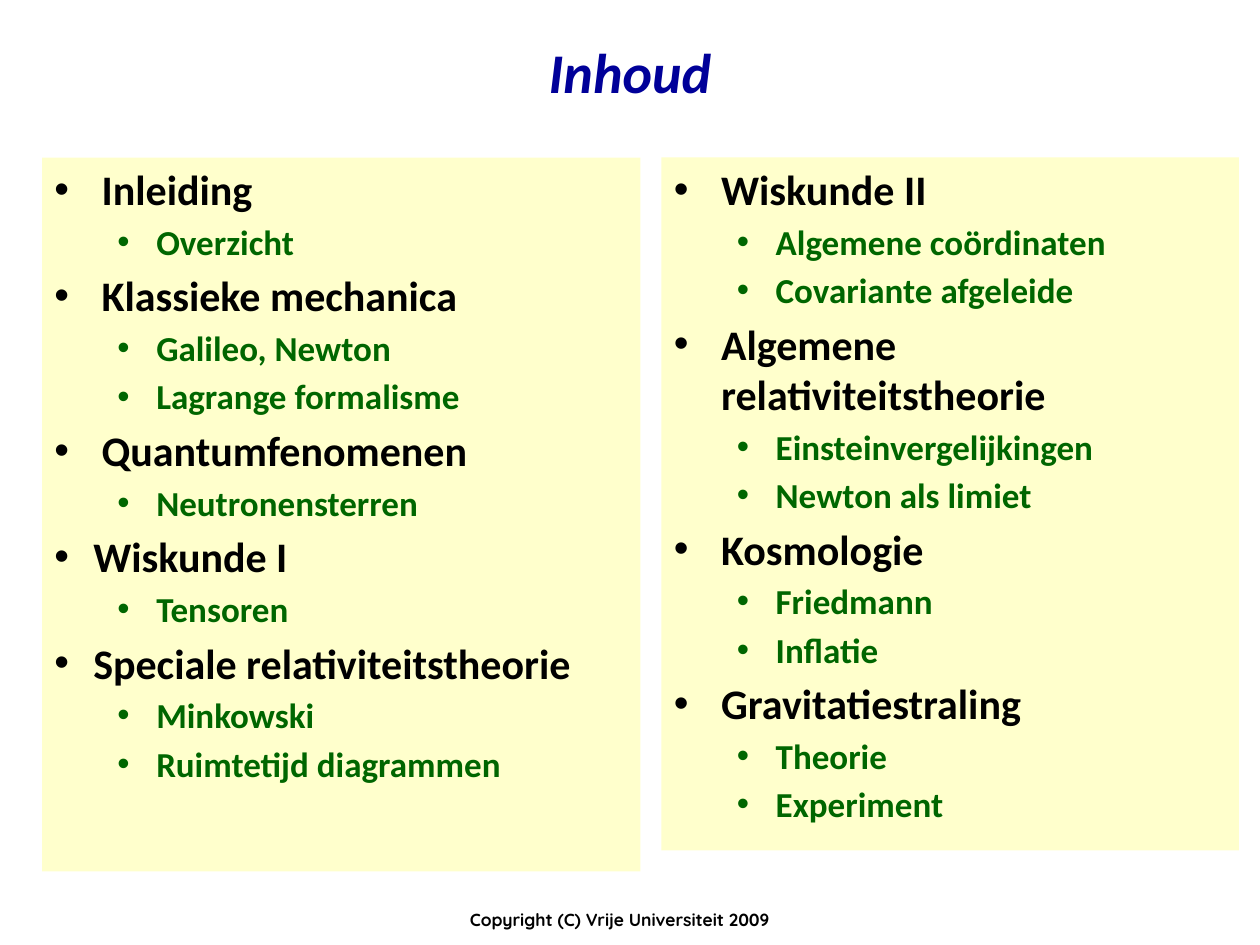
from dataclasses import dataclass

from lxml import etree
from pptx import Presentation
from pptx.dml.color import RGBColor
from pptx.enum.shapes import MSO_SHAPE
from pptx.enum.text import MSO_ANCHOR, MSO_AUTO_SIZE, PP_ALIGN
from pptx.oxml.ns import qn
from pptx.util import Emu, Pt

PX = 7620  # EMU per px, 120 px to the inch
RECT = MSO_SHAPE.RECTANGLE
TOP = MSO_ANCHOR.TOP
LEFT, CENTER = PP_ALIGN.LEFT, PP_ALIGN.CENTER
FIT_SHAPE = MSO_AUTO_SIZE.SHAPE_TO_FIT_TEXT
COLORS = {"title": "000099", "panel": "FFFFCC", "topic": "000000", "detail": "006600"}


@dataclass(frozen=True)
class Box:
    x: int
    y: int
    w: int
    h: int

    def emu(self) -> list[Emu]:
        return [Emu(v * PX) for v in (self.x, self.y, self.w, self.h)]


@dataclass(frozen=True)
class Level:
    margin: int
    hang: int
    space: float
    font: dict


@dataclass(frozen=True)
class Topic:
    text: str
    details: tuple[str, ...]
    narrow: bool = False


@dataclass(frozen=True)
class Panel:
    box: Box
    topics: tuple[Topic, ...]


TITLE_FONT = {"name": "Calibri", "size": Pt(32), "bold": True, "italic": True}
FOOTER_FONT = {"name": "Quicksand", "size": Pt(10), "bold": True}
TOPIC_FONT = {"name": "Calibri", "size": Pt(24), "bold": True}
DETAIL_FONT = {"name": "Calibri", "size": Pt(20), "bold": True}

TOPIC = Level(45, 45, 4.3, TOPIC_FONT)
NARROW_TOPIC = Level(37, 37, 4.3, TOPIC_FONT)
DETAIL = Level(97, 37, 3.6, DETAIL_FONT)

PANELS = (
    Panel(Box(40, 150, 570, 680), (
        Topic("Inleiding", ("Overzicht",)),
        Topic("Klassieke mechanica", ("Galileo, Newton", "Lagrange formalisme")),
        Topic("Quantumfenomenen", ("Neutronensterren",)),
        Topic("Wiskunde I", ("Tensoren",), narrow=True),
        Topic("Speciale relativiteitstheorie",
              ("Minkowski", "Ruimtetijd diagrammen"), narrow=True),
    )),
    Panel(Box(630, 150, 550, 660), (
        Topic("Wiskunde II", ("Algemene coördinaten", "Covariante afgeleide")),
        Topic("Algemene relativiteitstheorie",
              ("Einsteinvergelijkingen", "Newton als limiet")),
        Topic("Kosmologie", ("Friedmann", "Inflatie")),
        Topic("Gravitatiestraling", ("Theorie", "Experiment")),
    )),
)


def format_font(font, values: dict, color: str) -> None:
    for name, value in values.items():
        setattr(font, name, value)
    font.color.rgb = RGBColor.from_string(COLORS[color])


def place(sp, box: Box) -> None:
    sp.left, sp.top, sp.width, sp.height = box.emu()


def write_line(tf, text: str, font: dict, color: str) -> None:
    p = tf.paragraphs[0]
    p.alignment = CENTER
    r = p.add_run()
    r.text = text
    format_font(r.font, font, color)


def add_item(tf, text: str, level: Level, color: str) -> None:
    first = not tf.paragraphs[0].runs
    p = tf.paragraphs[0] if first else tf.add_paragraph()
    p.alignment = LEFT
    p.level = 1 if level is DETAIL else 0
    if not first:
        p.space_before = Pt(level.space)
    pPr = p._p.get_or_add_pPr()
    pPr.set("marL", str(level.margin * PX))
    pPr.set("indent", str(-level.hang * PX))
    etree.SubElement(pPr, qn("a:buFont")).set("typeface", "Arial")
    etree.SubElement(pPr, qn("a:buChar")).set("char", "•")
    r = p.add_run()
    r.text = text
    format_font(r.font, level.font, color)


def add_panel(s, panel: Panel) -> None:
    sp = s.shapes.add_shape(RECT, *panel.box.emu())
    sp.shadow.inherit = False
    sp.fill.solid()
    sp.fill.fore_color.rgb = RGBColor.from_string(COLORS["panel"])
    sp.line.fill.background()
    tf = sp.text_frame
    tf.word_wrap = True
    tf.vertical_anchor = TOP
    for topic in panel.topics:
        add_item(tf, topic.text, NARROW_TOPIC if topic.narrow else TOPIC, "topic")
        for detail in topic.details:
            add_item(tf, detail, DETAIL, "detail")


def main() -> None:
    prs = Presentation()
    prs.slide_width, prs.slide_height = Emu(1200 * PX), Emu(900 * PX)
    s = prs.slides.add_slide(prs.slide_layouts[5])

    # Title
    title = s.shapes.title
    place(title, Box(510, 30, 180, 77))
    tf = title.text_frame
    tf.word_wrap = False
    tf.auto_size = FIT_SHAPE
    tf.vertical_anchor = TOP
    write_line(tf, "Inhoud", TITLE_FONT, "title")

    # Topic panels
    for panel in PANELS:
        add_panel(s, panel)

    # Copyright line
    footer = s.shapes.add_textbox(*Box(400, 860, 380, 40).emu())
    footer.text_frame.word_wrap = True
    write_line(footer.text_frame, "Copyright (C) Vrije Universiteit 2009",
               FOOTER_FONT, "topic")

    prs.save("out.pptx")


if __name__ == "__main__":
    main()
